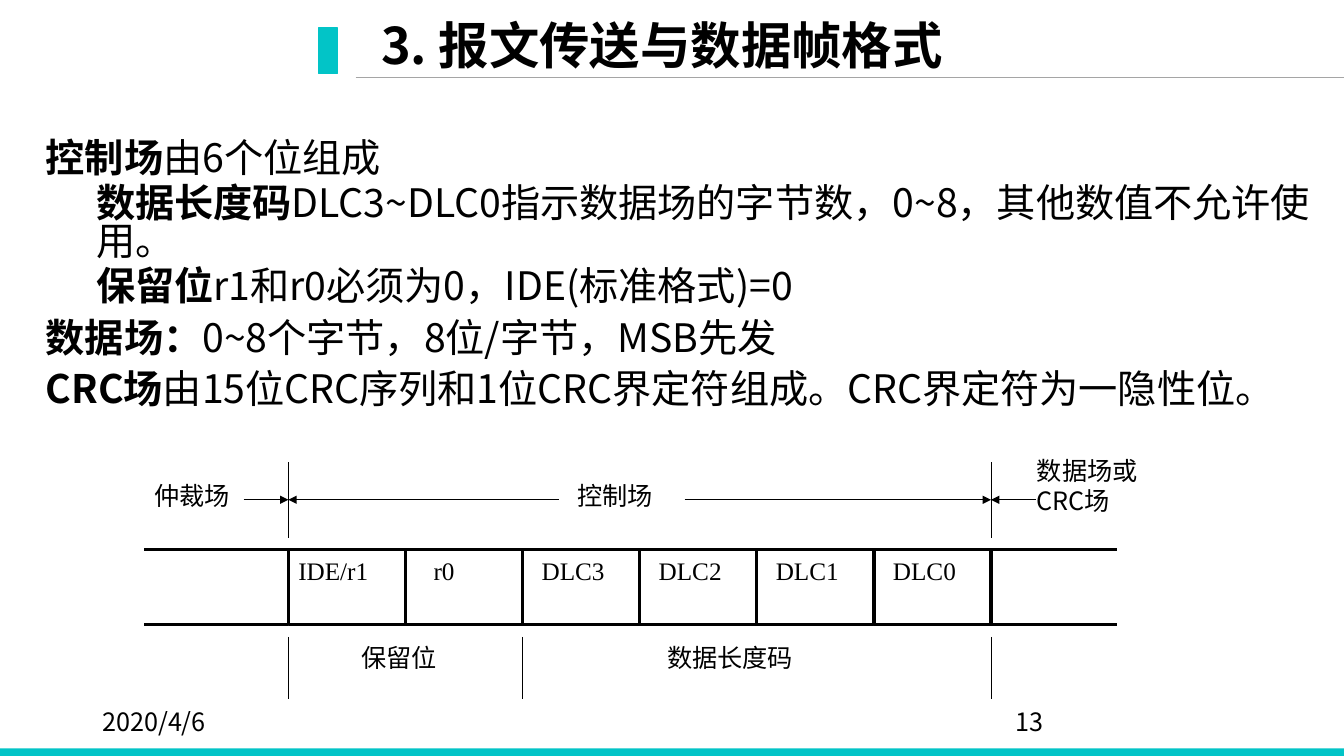
"""Build the slide on message transfer and data frame format."""
from lxml.etree import SubElement as Sub
from pptx import Presentation
from pptx.dml.color import RGBColor
from pptx.enum.shapes import MSO_CONNECTOR as Link, MSO_SHAPE as Form
from pptx.enum.text import MSO_ANCHOR as Anchor, MSO_AUTO_SIZE as Fit, PP_ALIGN as Align
from pptx.oxml.ns import qn
from pptx.util import Pt

TEAL = RGBColor(0x02, 0xC4, 0xC7)
GRAY = RGBColor(0xA5, 0xA5, 0xA5)
BLACK = RGBColor(0, 0, 0)
HEAD, PLAIN, SERIF = "Noto Sans CJK SC", "Noto Sans CJK JP", "Times New Roman"


class Page:
    def __init__(self, slide):
        self.slide = slide
        self.shapes = slide.shapes

    def place(self, shape, left, top, width, height):
        shape.left, shape.top = Pt(left), Pt(top)
        shape.width, shape.height = Pt(width), Pt(height)

    def font(self, font, size=None, name=None, bold=None):
        font.size = Pt(size) if size else None
        font.name, font.bold = name, bold
        font.color.rgb = BLACK

    def asian(self, para):
        for latin in list(para._p.iter(qn("a:latin"))):
            east = latin.makeelement(qn("a:ea"), {"typeface": latin.get("typeface")})
            latin.addnext(east)

    def title(self, text, *box):
        shape = self.shapes.title
        self.place(shape, *box)
        frame = shape.text_frame
        frame.auto_size, frame.vertical_anchor = Fit.NONE, Anchor.MIDDLE
        para = frame.paragraphs[0]
        para.text = text
        para.alignment, para.line_spacing = Align.LEFT, 0.9
        self.font(para.font, 36, HEAD, True)
        self.asian(para)

    def body(self, items, *box):
        shape = self.slide.placeholders[1]
        self.place(shape, *box)
        frame = shape.text_frame
        frame.auto_size = Fit.NONE
        for i, (level, lead, rest) in enumerate(items):
            para = frame.add_paragraph() if i else frame.paragraphs[0]
            para.level = level
            para.line_spacing = Pt(27)
            para.space_before = Pt((5 if level else 10) if i else 0)
            props = para._p.get_or_add_pPr()
            props.set("marL", str(Pt(36 * level)))
            props.set("indent", "0")
            Sub(props, qn("a:buNone"))
            self.font(para.font, 28)
            for text, name, bold in ((lead, HEAD, True), (rest, PLAIN, False)):
                run = para.add_run()
                run.text = text
                run.font.name, run.font.bold = name, bold
            self.asian(para)

    def label(self, text, left, top, width=83.5, height=45, name=HEAD):
        shape = self.shapes.add_textbox(Pt(left), Pt(top), Pt(width), Pt(height))
        frame = shape.text_frame
        frame.word_wrap = True
        para = frame.paragraphs[0]
        para.text = text
        para.line_spacing = Pt(22)
        self.font(para.font, 18, name)
        self.asian(para)

    def rect(self, left, top, width, height, fill=None, edge=None, weight=1):
        shape = self.shapes.add_shape(
            Form.RECTANGLE, Pt(left), Pt(top), Pt(width), Pt(height))
        shape.shadow.inherit = False
        if fill is None:
            shape.fill.background()
        else:
            shape.fill.solid()
            shape.fill.fore_color.rgb = fill
        if edge is None:
            shape.line.fill.background()
        else:
            shape.line.color.rgb = edge
            shape.line.width = Pt(weight)

    def line(self, x1, y1, x2, y2, weight=0.75, color=BLACK, arrow=False):
        link = self.shapes.add_connector(
            Link.STRAIGHT, Pt(x1), Pt(y1), Pt(x2), Pt(y2))
        link.line.color.rgb = color
        link.line.width = Pt(weight)
        Sub(link._element.spPr, qn("a:effectLst"))
        if arrow:
            Sub(link.line._get_or_add_ln(), qn("a:tailEnd"), type="triangle")


def main():
    deck = Presentation()
    deck.slide_width, deck.slide_height = Pt(960), Pt(540)
    page = Page(deck.slides.add_slide(deck.slide_layouts[1]))

    page.rect(0, 534.5, 962, 6.5, TEAL)
    page.line(254, 55.5, 960, 55.5, 0.5, GRAY)
    page.rect(227.5, 20, 13.5, 32.5, TEAL, TEAL)
    page.label("13", 718, 500.5, 216, 29)
    page.label("2020/4/6", 66, 500.5, 216, 29)
    page.title("3. 报文传送与数据帧格式", 265, 9.5, 647, 50.5)
    page.body([
        (0, "控制场", "由6个位组成"),
        (1, "数据长度码", "DLC3~DLC0指示数据场的字节数，0~8，其他数值不允许使用。"),
        (1, "保留位", "r1和r0必须为0，IDE(标准格式)=0"),
        (0, "数据场：", "0~8个字节，8位/字节，MSB先发"),
        (0, "CRC场", "由15位CRC序列和1位CRC界定符组成。CRC界定符为一隐性位。"),
    ], 25.5, 98.5, 934, 385)

    left, top, wide, high = 206, 392.5, 83.65, 53.5
    right, foot = left + 6 * wide, top + high
    cells = [("IDE/r1", 0), ("r0", 13), ("DLC3", 6.5),
             ("DLC2", 6.5), ("DLC1", 6.5), ("DLC0", 6.5)]
    for i, (text, shift) in enumerate(cells):
        x = left + i * wide
        page.rect(x, top, wide, high, edge=BLACK, weight=2.25)
        page.label(text, x + shift, top, name=SERIF)
    for y in (top, foot):
        page.line(left, y, 103, y, 2.25)
        page.line(right, y, 798, y, 2.25)

    for x in (left, right):
        page.line(x, 384, x, 330)
    for x in (left, left + 2 * wide, right):
        page.line(x, 455, x, 499.5)
    for start, end in ((174, left), (399, left), (489, right), (740, right)):
        page.line(start, 357, end, 357, arrow=True)

    page.label("仲裁场", 103, 339)
    page.label("控制场", 405.5, 339)
    page.label("数据场或CRC场", 733.5, 321, 109.5, 79)
    page.label("保留位", 251, 455)
    page.label("数据长度码", 469.5, 455, 122.5)

    deck.save("out.pptx")


if __name__ == "__main__":
    main()
